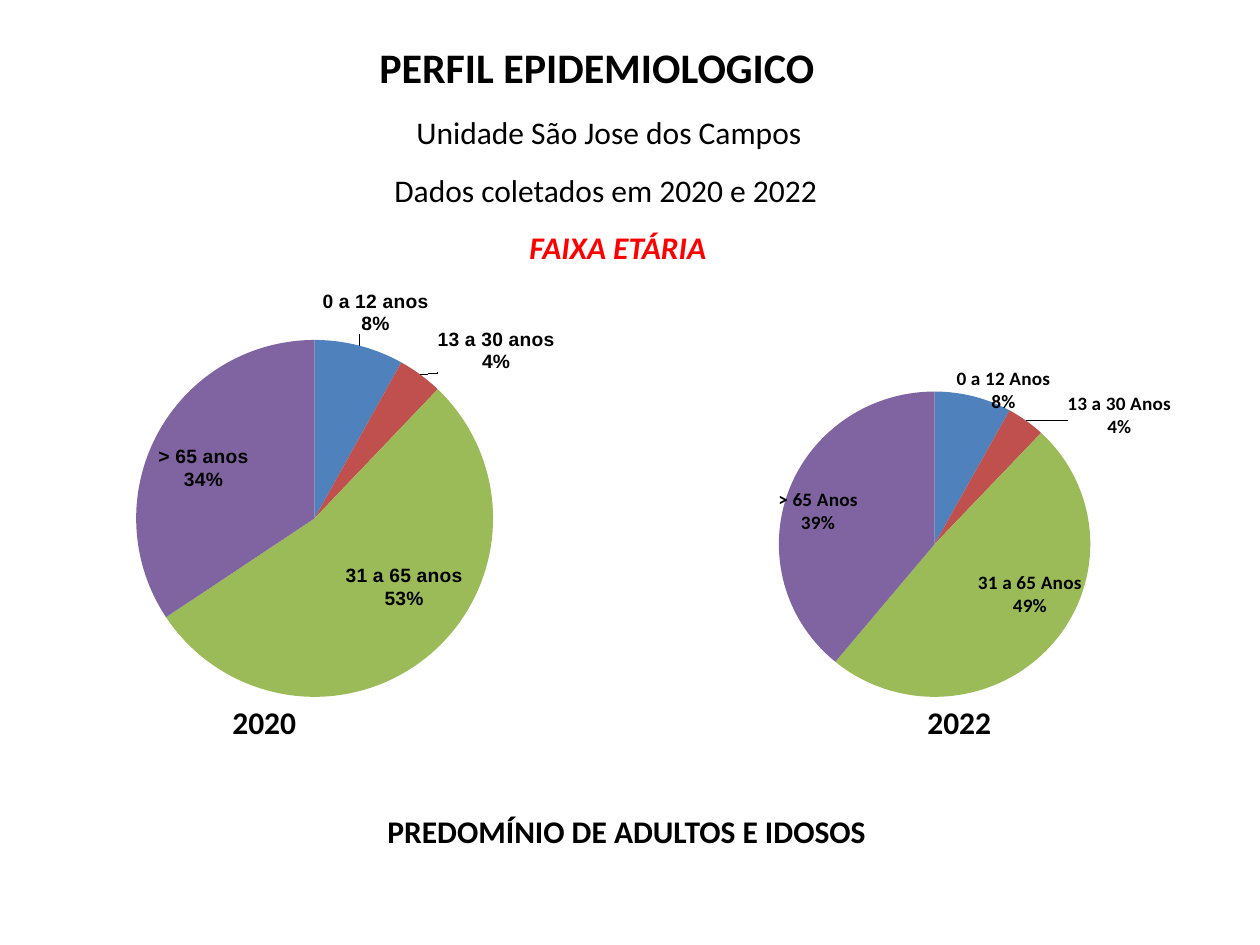
from dataclasses import dataclass

from lxml import etree
from pptx import Presentation
from pptx.chart.data import CategoryChartData
from pptx.dml.color import RGBColor
from pptx.enum.chart import XL_CHART_TYPE
from pptx.oxml import parse_xml
from pptx.oxml.ns import qn
from pptx.util import Emu, Pt

PIE = XL_CHART_TYPE.PIE
PX = 914400 // 126
C_NS = "http://schemas.openxmlformats.org/drawingml/2006/chart"
A_NS = "http://schemas.openxmlformats.org/drawingml/2006/main"


@dataclass(frozen=True)
class Theme:
    font: str = "Calibri"
    label_font: str = "Arial"
    ink: str = "000000"
    accent: str = "FF0000"
    slices: tuple = ("4F81BD", "C0504D", "9BBB59", "8064A2")
    title: int = 24
    body: int = 18
    chart: int = 10
    label: int = 11


T = Theme()

# Content: text, box in px, size, colour, bold, italic
TEXTS = [
    ("PERFIL EPIDEMIOLOGICO", (367, 35, 465, 63), T.title, T.ink, True, False),
    ("Unidade São Jose dos Campos", (404, 107, 413, 50), T.body, T.ink, False, False),
    ("Dados coletados em 2020 e 2022", (382, 165, 454, 50), T.body, T.ink, False, False),
    ("FAIXA ETÁRIA", (517, 222, 205, 50), T.body, T.accent, True, True),
    ("2020", (220, 697, 89, 50), T.body, T.ink, True, False),
    ("2022", (915, 697, 89, 50), T.body, T.ink, True, False),
    ("PREDOMÍNIO DE ADULTOS E IDOSOS", (375, 806, 509, 50), T.body, T.ink, True, False),
]

# Plot is a fraction of the chart; shifts move each label, in px
CHARTS = [
    dict(box=(-18, 272, 646, 425), plot=(0.08, 0.16, 0.87, 0.84), font=T.label_font,
         cats=["0 a 12 anos", "13 a 30 anos", "31 a 65 anos", "> 65 anos"],
         values=[8, 4, 53, 34],
         shifts=[(-41, -6), (16, 6), (33, 2), (-35, -8)]),
    dict(box=(620, 343, 617, 354), plot=(0.02, 0.12, 0.98, 0.88), font=T.font,
         cats=["0 a 12 Anos", "13 a 30 Anos", "31 a 65 Anos", "> 65 Anos"],
         values=[8, 4, 49, 39],
         shifts=[(-16, 24), (39, 24), (34, 0), (-43, -7)]),
]
LABEL_PLACES = ["outEnd", "outEnd", "ctr", "ctr"]


def emu(box):
    return [Emu(v * PX) for v in box]


def add_text(slide, text, box, size, color, bold, italic):
    tf = slide.shapes.add_textbox(*emu(box)).text_frame
    tf.word_wrap = False
    r = tf.paragraphs[0].add_run()
    r.text = text
    f = r.font
    f.name, f.size, f.bold, f.italic = T.font, Pt(size), bold, italic
    f.color.rgb = RGBColor.from_string(color)


def layout_xml(**parts):
    body = "".join(f'<c:{k} val="{v}"/>' for k, v in parts.items())
    return f"<c:layout><c:manualLayout>{body}</c:manualLayout></c:layout>"


def labels_xml(spec_box, shifts, font):
    """Category and percentage labels, each moved from its usual place."""
    style = f'''<c:numFmt formatCode="0&quot;%&quot;" sourceLinked="0"/>
      <c:spPr><a:noFill/><a:ln><a:noFill/></a:ln></c:spPr>
      <c:txPr><a:bodyPr/><a:p><a:pPr><a:defRPr sz="{T.label * 100}" b="1">
      <a:solidFill><a:srgbClr val="{T.ink}"/></a:solidFill><a:latin typeface="{font}"/>
      </a:defRPr></a:pPr><a:endParaRPr lang="pt-BR"/></a:p></c:txPr>'''
    flags = '''<c:showLegendKey val="0"/><c:showVal val="1"/><c:showCatName val="1"/>
      <c:showSerName val="0"/><c:showPercent val="0"/><c:showBubbleSize val="0"/>
      <c:separator>\n</c:separator>'''
    w, h = spec_box[2:]
    points = "".join(
        f'<c:dLbl><c:idx val="{i}"/>{layout_xml(x=round(dx / w, 2), y=round(dy / h, 2))}'
        f'{style}<c:dLblPos val="{place}"/>{flags}</c:dLbl>'
        for i, ((dx, dy), place) in enumerate(zip(shifts, LABEL_PLACES)))
    return (f'<c:dLbls xmlns:c="{C_NS}" xmlns:a="{A_NS}">{points}{style}{flags}'
            '<c:showLeaderLines val="1"/></c:dLbls>')


def add_pie(slide, box, plot, font, cats, values, shifts):
    data = CategoryChartData()
    data.categories = cats
    data.add_series("Series 1", values)
    chart = slide.shapes.add_chart(PIE, *emu(box), data).chart
    chart.has_legend = chart.has_title = False
    f = chart.font
    f.name, f.size = T.font, Pt(T.chart)
    f.color.rgb = RGBColor.from_string(T.ink)

    # Slices
    chart.plots[0].vary_by_categories = True
    ser = chart.plots[0].series[0]
    for i, color in enumerate(T.slices):
        fill = ser.points[i].format.fill
        fill.solid()
        fill.fore_color.rgb = RGBColor.from_string(color)

    # Labels
    cat = ser._element.find(qn("c:cat"))
    cat.addprevious(parse_xml(labels_xml(box, shifts, font)))

    # Plot area
    area = chart._chartSpace.chart.plotArea
    for old in area.findall(qn("c:layout")):
        area.remove(old)
    layout = etree.SubElement(area, qn("c:layout"))
    manual = etree.SubElement(layout, qn("c:manualLayout"))
    parts = [("layoutTarget", "inner"), ("xMode", "edge"), ("yMode", "edge"),
             *zip("xywh", plot)]
    for tag, val in parts:
        etree.SubElement(manual, qn(f"c:{tag}")).set("val", str(val))
    area.insert(0, layout)


def main():
    prs = Presentation()
    prs.slide_width, prs.slide_height = emu((1260, 945))
    s = prs.slides.add_slide(prs.slide_layouts[6])
    for item in TEXTS:
        add_text(s, *item)
    for pie in CHARTS:
        add_pie(s, **pie)
    prs.save("out.pptx")


if __name__ == "__main__":
    main()
